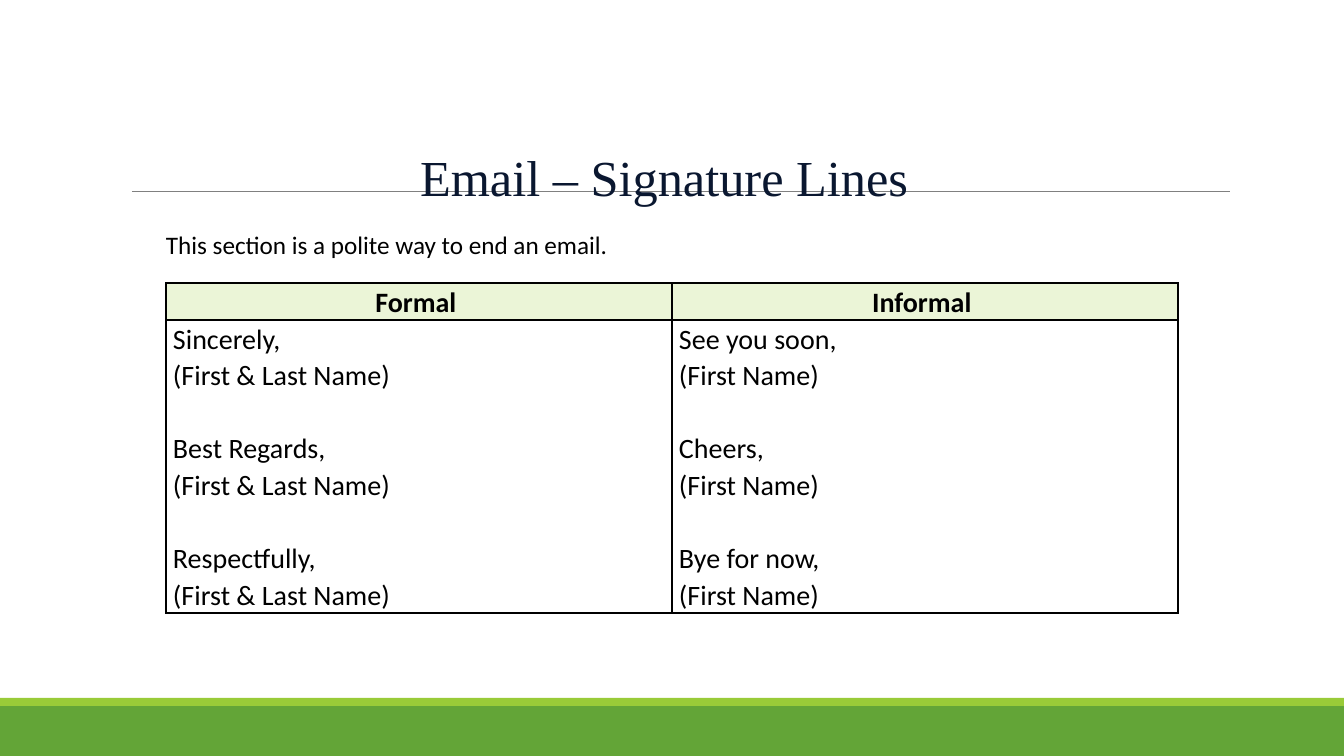
from dataclasses import dataclass

from lxml import etree
from pptx import Presentation
from pptx.dml.color import RGBColor
from pptx.enum.shapes import MSO_CONNECTOR, MSO_SHAPE
from pptx.enum.text import MSO_ANCHOR, MSO_AUTO_SIZE, PP_ALIGN
from pptx.oxml.ns import qn
from pptx.util import Emu, Pt

RECTANGLE = MSO_SHAPE.RECTANGLE
STRAIGHT = MSO_CONNECTOR.STRAIGHT
TOP = MSO_ANCHOR.TOP
LEFT, CENTER = PP_ALIGN.LEFT, PP_ALIGN.CENTER
NO_AUTOFIT, GROW = MSO_AUTO_SIZE.NONE, MSO_AUTO_SIZE.SHAPE_TO_FIT_TEXT

SLIDE_WIDTH, SLIDE_HEIGHT = 1344, 756
EMU_PER_PX = 12192000 / SLIDE_WIDTH


@dataclass(frozen=True)
class Theme:
    title_font: str = "Times New Roman"
    body_font: str = "Calibri"
    title_size: int = 36
    intro_size: int = 18
    table_size: int = 20
    title_color: str = "0A1730"
    text_color: str = "000000"
    rule_color: str = "808080"
    band_color: str = "63A537"
    stripe_color: str = "99CB38"
    header_fill: str = "EBF5D7"
    body_fill: str = "FFFFFF"


THEME = Theme()

HEADINGS = ("Formal ", "Informal ")
# Each column holds its closings and the name line that follows each one
SIGNATURES = (
    (("Sincerely,", "Best Regards,", "Respectfully,"), "(First & Last Name)"),
    (("See you soon,", "Cheers,", "Bye for now,"), "(First Name)"),
)


def px(length):
    return Emu(round(length * EMU_PER_PX))


def rgb(color):
    return RGBColor.from_string(color)


def add_run(paragraph, text, size, font=THEME.body_font,
            color=THEME.text_color, bold=False):
    run = paragraph.add_run()
    run.text = text
    run.font.size = Pt(size)
    run.font.name = font
    run.font.bold = bold
    run.font.color.rgb = rgb(color)


def add_band(slide, top, height, color):
    band = slide.shapes.add_shape(RECTANGLE, 0, px(top), px(SLIDE_WIDTH), px(height))
    band.shadow.inherit = False
    band.fill.solid()
    band.fill.fore_color.rgb = rgb(color)
    band.line.fill.background()


def add_rule(slide, left, right, y):
    rule = slide.shapes.add_connector(STRAIGHT, px(left), px(y), px(right), px(y))
    rule.line.color.rgb = rgb(THEME.rule_color)
    rule.line.width = Pt(0.5)
    etree.SubElement(rule.element.spPr, qn("a:effectLst"))


def set_title(slide, text):
    title = slide.shapes.title
    title.left, title.top, title.width, title.height = map(px, (410, 146, 524, 86))
    # Bring the title in front of the rule
    title.element.getparent().append(title.element)
    frame = title.text_frame
    frame.auto_size = NO_AUTOFIT
    frame.vertical_anchor = TOP
    frame.margin_top = px(9)
    paragraph = frame.paragraphs[0]
    paragraph.alignment = LEFT
    paragraph.line_spacing = 0.85
    add_run(paragraph, text, THEME.title_size, THEME.title_font, THEME.title_color)


def add_intro(slide, text):
    box = slide.shapes.add_textbox(px(156), px(224), px(674), px(40))
    frame = box.text_frame
    frame.word_wrap = True
    frame.auto_size = GROW
    add_run(frame.paragraphs[0], text, THEME.intro_size)


def set_borders(cell):
    properties = cell._tc.get_or_add_tcPr()
    for position, side in enumerate(("lnL", "lnR", "lnT", "lnB")):
        border = etree.Element(qn(f"a:{side}"), w=str(Pt(1)))
        fill = etree.SubElement(border, qn("a:solidFill"))
        etree.SubElement(fill, qn("a:srgbClr"), val=THEME.text_color)
        properties.insert(position, border)


def fill_cell(cell, groups, fill, alignment=LEFT, bold=False):
    cell.margin_left = cell.margin_right = px(7)
    cell.margin_top = cell.margin_bottom = 0
    cell.fill.solid()
    cell.fill.fore_color.rgb = rgb(fill)
    set_borders(cell)
    frame = cell.text_frame
    for group_index, group in enumerate(groups):
        for line_index, text in enumerate(group):
            is_first = group_index == line_index == 0
            paragraph = frame.paragraphs[0] if is_first else frame.add_paragraph()
            paragraph.alignment = alignment
            paragraph.line_spacing = 1.07
            # One line of space separates the signatures
            if group_index and not line_index:
                paragraph.space_before = Pt(26)
            add_run(paragraph, text, THEME.table_size, bold=bold)


def add_signature_table(slide):
    heights = (37, 293)
    column_width = 506
    table = slide.shapes.add_table(
        len(heights), len(HEADINGS), px(166), px(283),
        px(column_width * len(HEADINGS)), px(sum(heights))).table
    for row, height in zip(table.rows, heights):
        row.height = px(height)
    for index, (heading, (closings, name)) in enumerate(zip(HEADINGS, SIGNATURES)):
        table.columns[index].width = px(column_width)
        fill_cell(table.cell(0, index), [[heading]], THEME.header_fill, CENTER, True)
        groups = [(closing, name) for closing in closings]
        fill_cell(table.cell(1, index), groups, THEME.body_fill)


def main():
    presentation = Presentation()
    presentation.slide_width = px(SLIDE_WIDTH)
    presentation.slide_height = px(SLIDE_HEIGHT)
    slide = presentation.slides.add_slide(presentation.slide_layouts[5])

    # Footer bands and title rule
    add_band(slide, 706, 50, THEME.band_color)
    add_band(slide, 698, 8, THEME.stripe_color)
    add_rule(slide, 132, 1230, 191)

    # Content
    set_title(slide, "Email – Signature Lines")
    add_signature_table(slide)
    add_intro(slide, "This section is a polite way to end an email.")

    presentation.save("out.pptx")


if __name__ == "__main__":
    main()
